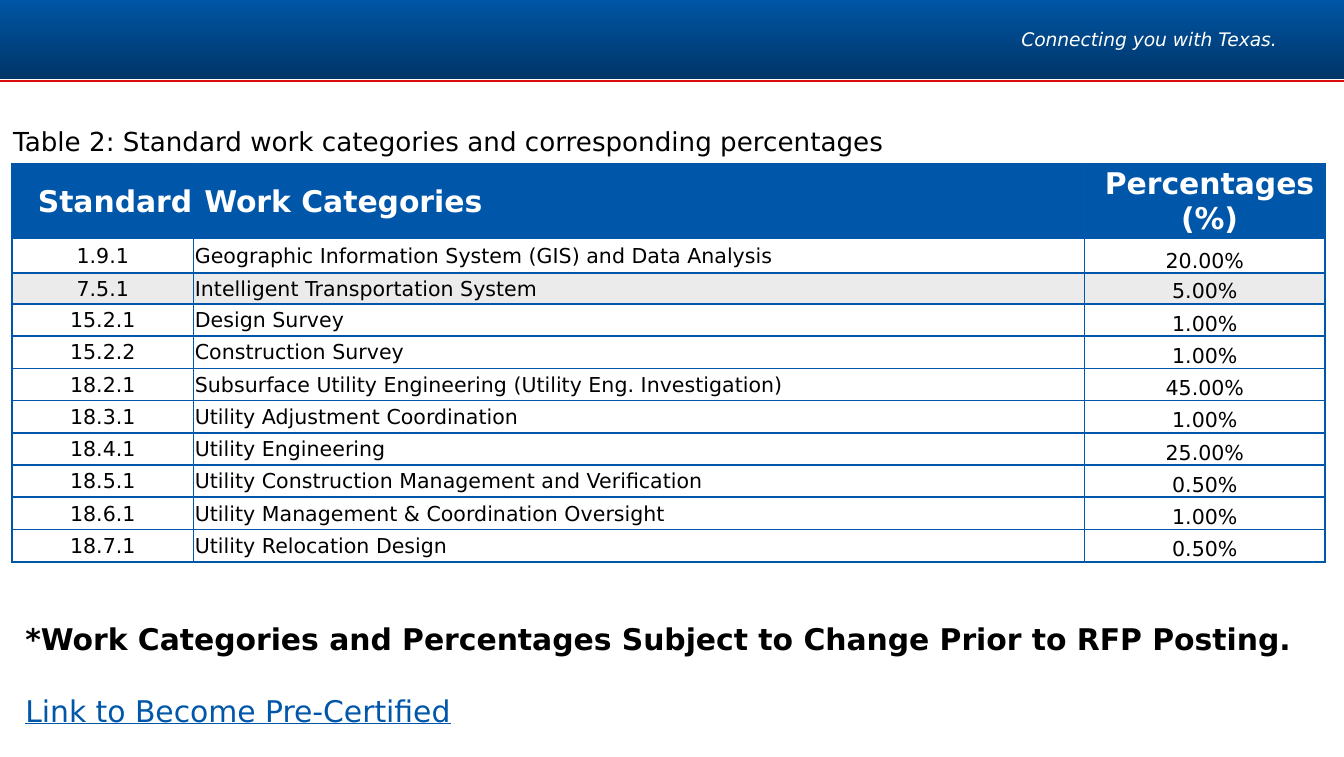
from lxml import etree
from pptx import Presentation
from pptx.dml.color import RGBColor
from pptx.enum.shapes import MSO_CONNECTOR, MSO_SHAPE
from pptx.enum.text import MSO_ANCHOR, PP_ALIGN
from pptx.oxml.ns import qn
from pptx.util import Inches, Pt

LEFT, CENTER, RIGHT = PP_ALIGN.LEFT, PP_ALIGN.CENTER, PP_ALIGN.RIGHT
MIDDLE, BOTTOM = MSO_ANCHOR.MIDDLE, MSO_ANCHOR.BOTTOM
FONT = "DejaVu Sans"
COLORS = {
    "blue": "0056A9", "divider": "0058B0", "band_top": "0057A8", "band_bottom": "003567",
    "red": "D90D0D", "gray": "EBEBEB", "white": "FFFFFF", "black": "000000",
}


def rgb(name):
    return RGBColor.from_string(COLORS[name])


def write(paragraph, text, size, color, align=LEFT, bold=False):
    paragraph.text = text
    paragraph.alignment = align
    font = paragraph.font
    font.name, font.size, font.bold = FONT, Pt(size), bold
    font.color.rgb = rgb(color)


prs = Presentation()
prs.slide_width, prs.slide_height = Inches(10), Inches(5.63)
slide = prs.slides.add_slide(prs.slide_layouts[6])
shapes = slide.shapes

# Header band with its red rule and tagline
band = shapes.add_shape(MSO_SHAPE.RECTANGLE, Inches(-0.01), Inches(-0.03), Inches(10.02), Inches(0.62))
band.shadow.inherit = False
band.line.fill.background()
band.fill.gradient()
band.fill.gradient_angle = 270
for stop, color in zip(band.fill.gradient_stops, ("band_top", "band_bottom")):
    stop.color.rgb = rgb(color)

rule = shapes.add_connector(MSO_CONNECTOR.STRAIGHT, Inches(-0.01), Inches(0.6), Inches(10.01), Inches(0.6))
rule.line.color.rgb = rgb("red")
rule.line.width = Pt(1)
etree.SubElement(rule._element.spPr, qn("a:effectLst"))

tagline = shapes.add_textbox(Inches(7.17), 0, Inches(2.33), Inches(0.6)).text_frame
tagline.word_wrap = True
tagline.vertical_anchor = MIDDLE
tagline.margin_left = tagline.margin_right = tagline.margin_top = tagline.margin_bottom = 0
write(tagline.paragraphs[0], "Connecting you with Texas.", 10, "white", RIGHT)
tagline.paragraphs[0].font.italic = True
tagline.paragraphs[0].line_spacing = 0.9

# Table caption
caption = shapes.add_textbox(0, Inches(0.88), Inches(6.77), Inches(0.34)).text_frame
caption.word_wrap = False
write(caption.paragraphs[0], "Table 2: Standard work categories and corresponding percentages", 14, "black")

# Work category table
rows = [
    ("Standard", "Work Categories", "Percentages (%)"),
    ("1.9.1", "Geographic Information System (GIS) and Data Analysis", "20.00%"),
    ("7.5.1", "Intelligent Transportation System", "5.00%"),
    ("15.2.1", "Design Survey", "1.00%"),
    ("15.2.2", "Construction Survey", "1.00%"),
    ("18.2.1", "Subsurface Utility Engineering (Utility Eng. Investigation)", "45.00%"),
    ("18.3.1", "Utility Adjustment Coordination", "1.00%"),
    ("18.4.1", "Utility Engineering", "25.00%"),
    ("18.5.1", "Utility Construction Management and Verification", "0.50%"),
    ("18.6.1", "Utility Management & Coordination Oversight", "1.00%"),
    ("18.7.1", "Utility Relocation Design", "0.50%"),
]
column_widths = [1.35, 6.63, 1.79]
row_heights = [0.55, 0.26, 0.23] + [0.24] * 8
header_aligns = [RIGHT, LEFT, CENTER]
body_aligns = [CENTER, LEFT, CENTER]
last_column = len(column_widths) - 1

categories = shapes.add_table(len(rows), len(column_widths), Inches(0.09), Inches(1.22),
                              Inches(9.78), Inches(2.98)).table
categories.first_row = categories.horz_banding = False
for column, width in zip(categories.columns, column_widths):
    column.width = Inches(width)
for row, height in zip(categories.rows, row_heights):
    row.height = Inches(height)

for r, values in enumerate(rows):
    header = r == 0
    for c, value in enumerate(values):
        cell = categories.cell(r, c)
        cell.margin_left = Inches(0.08 if header else 0.01)
        cell.margin_right = cell.margin_top = Inches(0.01)
        cell.margin_bottom = 0
        cell.vertical_anchor = BOTTOM if c == last_column and not header else MIDDLE
        cell.fill.solid()
        cell.fill.fore_color.rgb = rgb("blue" if header else "gray" if r == 2 else "white")
        paragraph = cell.text_frame.paragraphs[0]
        if header:
            write(paragraph, value, 16, "white", header_aligns[c], bold=True)
        else:
            write(paragraph, value, 11, "black", body_aligns[c])

        # Borders go ahead of the fill in the cell properties
        borders = {
            "a:lnL": "blue" if c == 0 else "divider",
            "a:lnR": "blue" if c == last_column else "divider",
            "a:lnT": "blue",
            "a:lnB": "blue",
        }
        for position, (tag, color) in enumerate(borders.items()):
            border = etree.Element(qn(tag), w=str(Pt(1)))
            solid = etree.SubElement(border, qn("a:solidFill"))
            etree.SubElement(solid, qn("a:srgbClr"), val=COLORS[color])
            cell._tc.get_or_add_tcPr().insert(position, border)

# Note and link text
notes = shapes.add_textbox(Inches(0.09), Inches(4.57), Inches(10.65), Inches(1.18)).text_frame
notes.word_wrap = True
change_note = notes.paragraphs[0]
write(change_note, "*Work Categories and Percentages Subject to Change Prior to RFP Posting.", 16, "black", bold=True)
change_note.space_after = Pt(19)
certify_link = notes.add_paragraph()
write(certify_link, "Link to Become Pre-Certified", 16, "blue")
certify_link.font.underline = True

prs.save("out.pptx")
